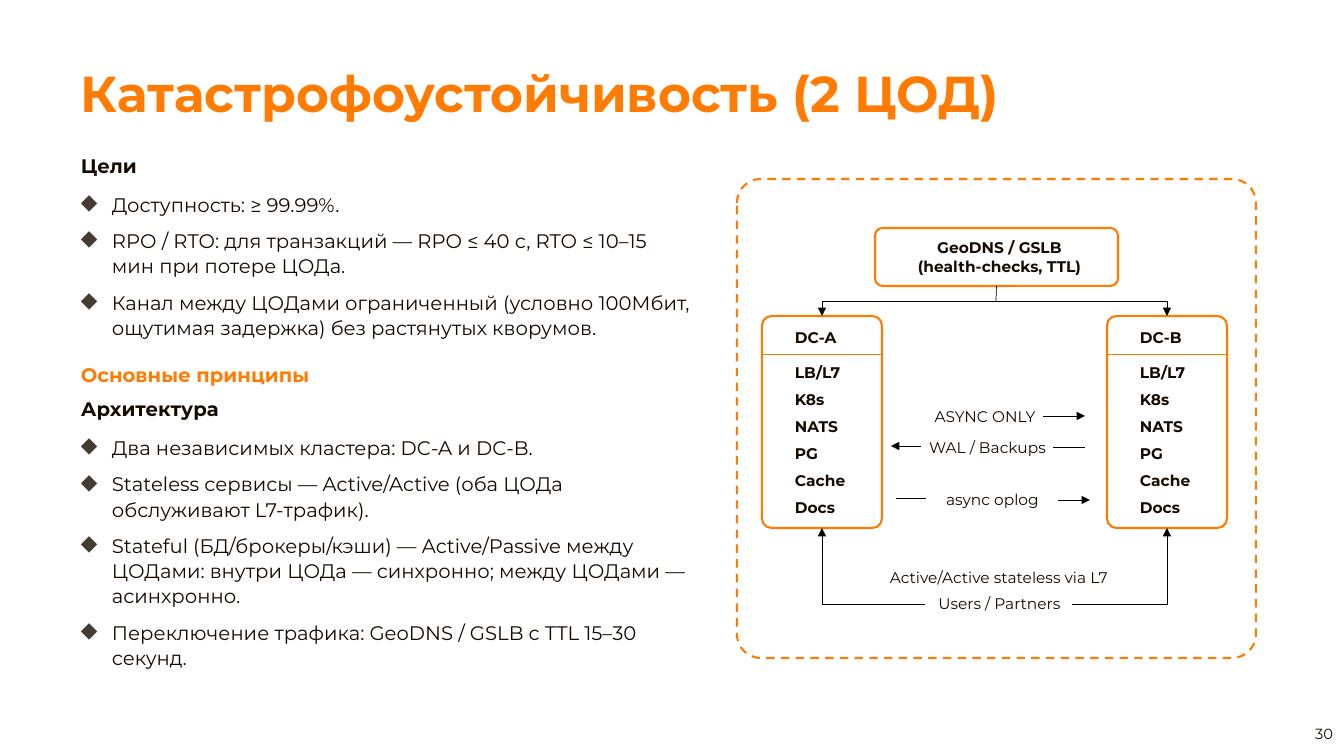
"""Build the slide on disaster tolerance across two data centres."""
from lxml import etree
from pptx import Presentation, util as u
from pptx.dml import color as c
from pptx.enum import dml, shapes, text
from pptx.oxml import ns

SCALE = 914400 / 100.8
FACE = "Montserrat"
DARK, ORANGE, WHITE, BLACK, BROWN = "150A00", "FF7B01", "FFFFFF", "000000", "443B33"
MID = {"alignment": text.PP_ALIGN.CENTER}
BOLD = {"bold": True}
GOAL = {"line_spacing": 1.07, "space_after": u.Pt(6)}
ITEM = {"line_spacing": 1.07, "space_before": u.Pt(4), "space_after": u.Pt(4)}
STRAIGHT, ELBOW = shapes.MSO_CONNECTOR.STRAIGHT, shapes.MSO_CONNECTOR.ELBOW


def px(n):
    """Turn pixels into EMU."""
    return u.Emu(round(n * SCALE))


def hue(code):
    """Turn a hex string into a colour."""
    return c.RGBColor.from_string(code)


def apply(target, values):
    """Set each attribute named in a dict."""
    for key, value in values.items():
        setattr(target, key, value)


def add_tag(parent, name, **attrs):
    """Append a drawing element with its attributes."""
    return etree.SubElement(parent, ns.qn(name), attrs)


def bullet(para):
    """Give a paragraph a diamond bullet and a hanging indent."""
    props = para._p.get_or_add_pPr()
    props.set("marL", str(px(31)))
    props.set("indent", str(px(-31)))
    add_tag(add_tag(props, "a:buClr"), "a:srgbClr", val=BROWN)
    add_tag(props, "a:buSzPct", val="110000")
    add_tag(props, "a:buChar", char="◆")


def write(frame, rows, size, ink=DARK):
    """Fill a text frame from rows of words, paragraph and font formats."""
    frame.word_wrap = True
    for i, (words, form, font) in enumerate(rows):
        para = frame.add_paragraph() if i else frame.paragraphs[0]
        if form is ITEM:
            bullet(para)
        apply(para, form)
        run = para.add_run()
        run.text = words
        run.font.color.rgb = hue(font.get("ink", ink))
        apply(run.font, {"name": FACE, "size": u.Pt(size), "bold": font.get("bold", False)})


def label(parts, box, rows, size, ink=DARK):
    """Add a text box."""
    frame = parts.add_textbox(*map(px, box)).text_frame
    write(frame, rows, size, ink)
    return frame


def panel(parts, box, round_by):
    """Add a white rounded box with an orange outline."""
    shape = parts.add_shape(shapes.MSO_SHAPE.ROUNDED_RECTANGLE, *map(px, box))
    shape.adjustments[0] = round_by
    shape.shadow.inherit = False
    shape.fill.solid()
    shape.fill.fore_color.rgb = hue(WHITE)
    shape.line.color.rgb = hue(ORANGE)
    shape.line.width = u.Pt(1.5)
    return shape


def link(parts, ends, arrow=False, ink=BLACK, kind=STRAIGHT):
    """Add a thin line, with an arrowhead at its end on request."""
    line = parts.add_connector(kind, *map(px, ends))
    line.line.color.rgb = hue(ink)
    line.line.width = u.Pt(0.5)
    props = line._element.spPr
    if kind == ELBOW:
        props.find(ns.qn("a:prstGeom")).set("prst", "bentConnector2")
    if arrow:
        add_tag(props.find(ns.qn("a:ln")), "a:tailEnd", type="triangle")
    add_tag(props, "a:effectLst")
    return line


def centre(parts, left, name):
    """Add a data centre with its layers and its feeding arrow."""
    box = panel(parts, (left, 316, 120, 212), 0.08)
    gap = {"space_before": u.Pt(6)}
    layers = ["LB/L7", "K8s", "NATS", "PG", "Cache", "Docs"]
    rows = [(name, {"space_after": u.Pt(6)}, BOLD)] + [(t, gap, BOLD) for t in layers]
    label(parts, (left + 23, 323, 81, 192), rows, 11)
    link(parts, (left, 354, left + 120, 354), ink=ORANGE)
    link(parts, (left + 60, 301, left + 60, 316), True).end_connect(box, 0)


def scheme(parts):
    """Draw the two-site diagram."""
    frame = panel(parts, (737, 179, 519, 479), 0.05)
    frame.line.dash_style = dml.MSO_LINE.DASH
    geo = panel(parts, (875, 228, 243, 58), 0.13)
    write(geo.text_frame, [(t, MID, BOLD) for t in ("GeoDNS / GSLB", "(health-checks, TTL)")], 11)
    apply(geo.text_frame, {"vertical_anchor": text.MSO_ANCHOR.MIDDLE, "margin_left": px(16)})
    link(parts, (996, 286, 996, 301)).begin_connect(geo, 2)
    link(parts, (822, 301, 1167, 301))
    for left, name in ((762, "DC-A"), (1107, "DC-B")):
        centre(parts, left, name)
    for words, left, top, width in (
        ("ASYNC ONLY", 918, 402, 134),
        ("WAL / Backups", 916, 433, 143),
        ("async oplog", 921, 485, 143),
        ("Active/Active stateless via L7", 873, 563, 252),
        ("Users / Partners", 926, 589, 147),
    ):
        label(parts, (left, top, width, 30), [(words, MID, {})], 11)
    for ends, arrow in (
        ((1043, 416, 1085, 416), True),
        ((1085, 447, 1053, 447), False),
        ((921, 446, 891, 446), True),
        ((896, 498, 926, 498), False),
        ((1058, 500, 1090, 500), True),
    ):
        link(parts, ends, arrow)
    for start, end in ((925, 822), (1072, 1167)):
        link(parts, (start, 604, end, 528), True, kind=ELBOW)


def main():
    """Build and save the slide."""
    deck = Presentation()
    apply(deck, {"slide_width": px(1344), "slide_height": px(756)})
    parts = deck.slides.add_slide(deck.slide_layouts[6]).shapes
    page = label(parts, (1041, 714, 302, 40), [("30", {"alignment": text.PP_ALIGN.RIGHT}, {})], 10.5)
    page.vertical_anchor = text.MSO_ANCHOR.MIDDLE
    title = ("Катастрофоустойчивость (2 ЦОД)", {"line_spacing": 1.07}, BOLD)
    label(parts, (71, 53, 1182, 72), [title], 36, ORANGE)
    goals = [
        "Доступность: ≥ 99.99%.",
        "RPO / RTO: для транзакций — RPO ≤ 40 с, RTO ≤ 10–15 мин при потере ЦОДа.",
        "Канал между ЦОДами ограниченный (условно 100Мбит, ощутимая задержка) "
        "без растянутых кворумов.",
    ]
    rules = [
        "Два независимых кластера: DC-A и DC-B.",
        "Stateless сервисы — Active/Active (оба ЦОДа обслуживают L7-трафик).",
        "Stateful (БД/брокеры/кэши) — Active/Passive между ЦОДами: внутри ЦОДа — "
        "синхронно; между ЦОДами — асинхронно.",
        "Переключение трафика: GeoDNS / GSLB с TTL 15–30 секунд.",
    ]
    rows = [("Цели", GOAL, BOLD)]
    rows += [(t, ITEM, {}) for t in goals]
    rows.append(("Основные принципы", GOAL | {"space_before": u.Pt(12)}, BOLD | {"ink": ORANGE}))
    rows.append(("Архитектура", GOAL, BOLD))
    rows += [(t, ITEM, {}) for t in rules]
    label(parts, (71, 147, 632, 531), rows, 14)
    scheme(parts.add_group_shape().shapes)
    deck.save("out.pptx")


if __name__ == "__main__":
    main()
